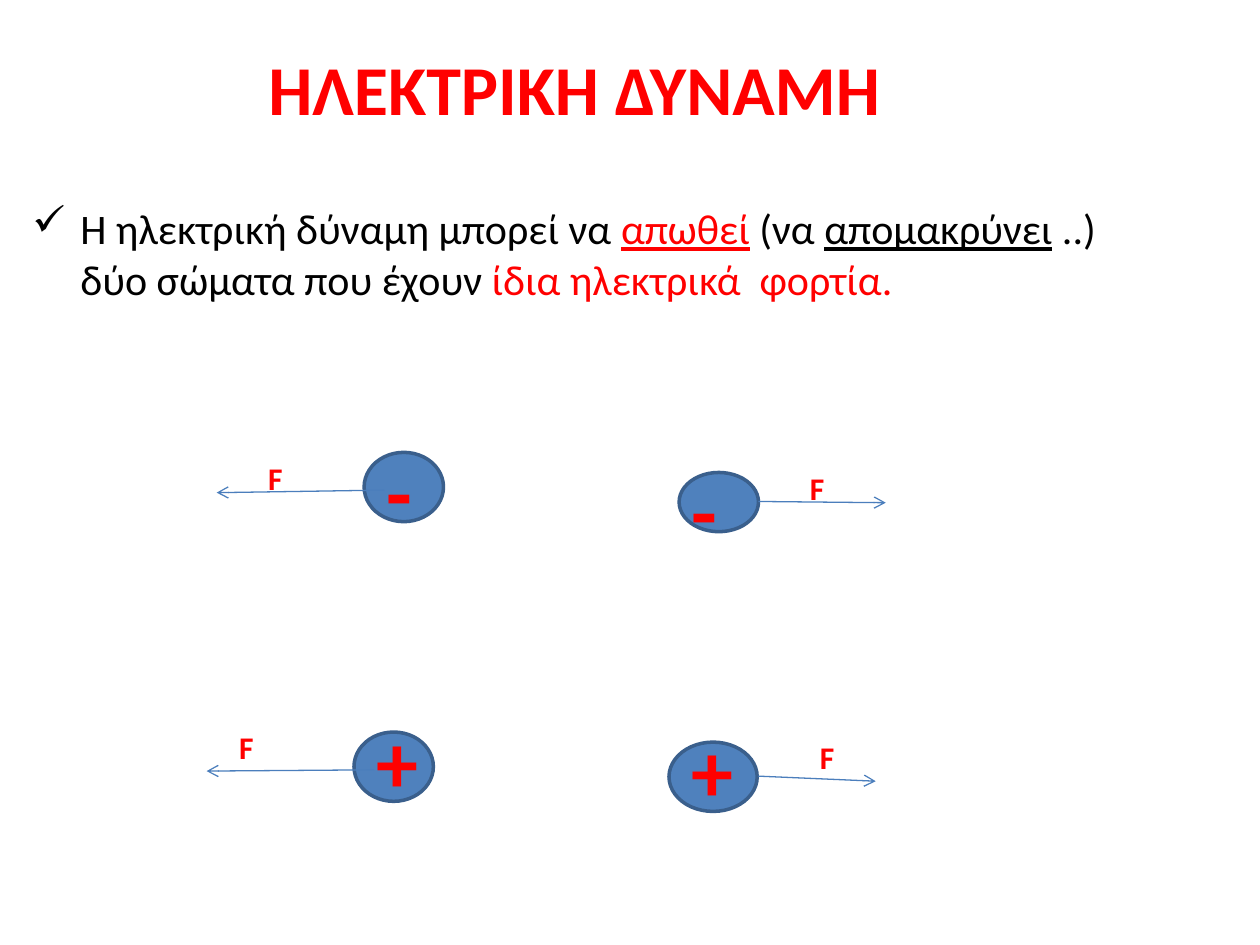
from lxml.etree import SubElement
from pptx import Presentation
from pptx.dml.color import RGBColor
from pptx.enum.shapes import MSO_CONNECTOR, MSO_SHAPE
from pptx.enum.text import MSO_ANCHOR, MSO_AUTO_SIZE, PP_ALIGN
from pptx.oxml.ns import qn
from pptx.util import Inches, Pt

THEME = {
    "font": "Calibri", "red": "FF0000", "black": "000000",
    "fill": "4F81BD", "edge": "3A5F8C", "arrow": "4B7EBC",
    "title": 40, "body": 24, "sign": 48, "force": 18,
}
TITLE = "ΗΛΕΚΤΡΙΚΗ ΔΥΝΑΜΗ"
BODY = [
    ("Η ηλεκτρική δύναμη μπορεί να ", "black", False),
    ("απωθεί", "red", True),
    (" ", "red", False),
    ("(να ", "black", False),
    ("απομακρύνει", "black", True),
    (" ..) δύο σώματα που έχουν ", "black", False),
    ("ίδια ηλεκτρικά  φορτία.", "red", False),
]
CHARGES = [
    {"sign": "+", "ball": (2.81, 5.81, 0.63, 0.55), "mark": (2.89, 5.58),
     "arrow": (2.97, 6.11, 1.64, 6.12), "force": (1.8, 5.73)},
    {"sign": "+", "ball": (5.31, 5.89, 0.7, 0.55), "mark": (5.39, 5.65),
     "arrow": (6.02, 6.16, 6.95, 6.2), "force": (6.41, 5.81)},
    {"sign": "-", "ball": (2.89, 3.59, 0.63, 0.55), "mark": (2.97, 3.44),
     "arrow": (3.05, 3.89, 1.72, 3.91), "force": (2.03, 3.59)},
    {"sign": "-", "ball": (5.39, 3.75, 0.63, 0.47), "mark": (5.39, 3.59),
     "arrow": (6.02, 3.98, 7.03, 3.99), "force": (6.33, 3.67)},
]


def color(name):
    return RGBColor.from_string(THEME[name])


def inch(nums):
    return [Inches(n) for n in nums]


def style(para, size, bold=True):
    font = para.font
    font.name, font.size, font.bold = THEME["font"], Pt(THEME[size]), bold
    if bold:
        font.color.rgb = color("red")


def add_text(slide, spot, text, size):
    frame = slide.shapes.add_textbox(*inch(spot)).text_frame
    frame.word_wrap = True
    frame.text = text
    style(frame.paragraphs[0], size)


def add_title(slide):
    title = slide.shapes.title
    title.left, title.top, title.width, title.height = inch((2.03, 0.31, 6.56, 0.77))
    frame = title.text_frame
    frame.text = TITLE
    frame.vertical_anchor = MSO_ANCHOR.TOP
    frame.auto_size = MSO_AUTO_SIZE.NONE
    para = frame.paragraphs[0]
    para.alignment = PP_ALIGN.LEFT
    style(para, "title")


def add_body(slide):
    frame = slide.shapes.add_textbox(*inch((0.16, 1.56, 9, 3.59))).text_frame
    frame.word_wrap = True
    para = frame.paragraphs[0]
    props = para._p.get_or_add_pPr()
    props.set("marL", str(Inches(0.38)))
    props.set("indent", str(Inches(-0.38)))
    SubElement(props, qn("a:buChar"), char="✓")
    style(para, "body", False)
    for text, tint, under in BODY:
        run = para.add_run()
        run.text = text
        run.font.color.rgb = color(tint)
        run.font.underline = under


def add_ball(slide, spot):
    ball = slide.shapes.add_shape(MSO_SHAPE.OVAL, *inch(spot))
    ball.shadow.inherit = False
    ball.fill.solid()
    ball.fill.fore_color.rgb = color("fill")
    ball.line.color.rgb = color("edge")
    ball.line.width = Pt(2)


def add_arrow(slide, ends):
    arrow = slide.shapes.add_connector(MSO_CONNECTOR.STRAIGHT, *inch(ends))
    arrow.line.color.rgb = color("arrow")
    arrow.line.width = Pt(0.75)
    SubElement(arrow.line._get_or_add_ln(), qn("a:tailEnd"), type="arrow")
    SubElement(arrow._element.spPr, qn("a:effectLst"))


def main():
    """Build the slide on electric repulsion between like charges."""
    deck = Presentation()
    deck.slide_width, deck.slide_height = inch((10, 7.5))
    slide = deck.slides.add_slide(deck.slide_layouts[5])
    add_title(slide)
    add_body(slide)
    for charge in CHARGES:
        add_ball(slide, charge["ball"])
        add_arrow(slide, charge["arrow"])
        add_text(slide, (*charge["mark"], 0.47, 0.91), charge["sign"], "sign")
        add_text(slide, (*charge["force"], 0.47, 0.4), "F", "force")
    deck.save("out.pptx")


if __name__ == "__main__":
    main()
